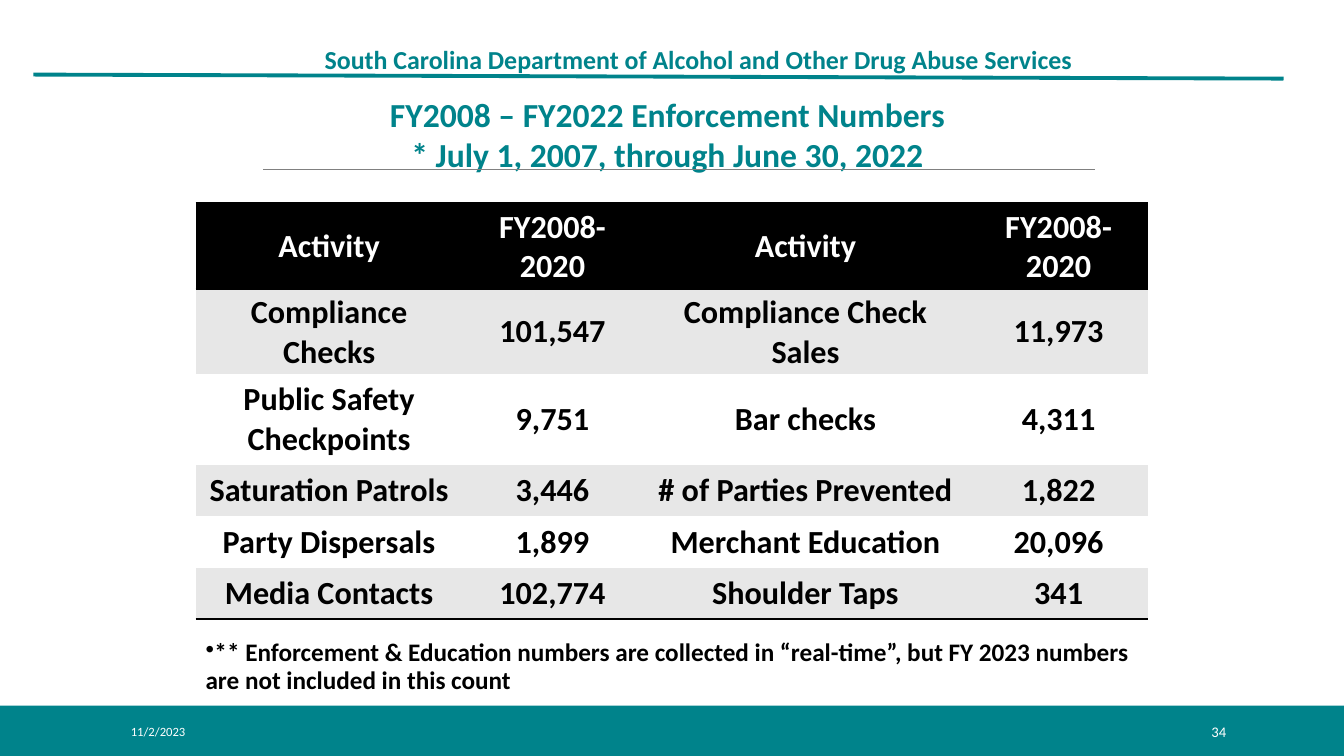
import pptx
import pptx.dml.color
import pptx.enum.shapes
import pptx.enum.text
import pptx.oxml
import pptx.oxml.ns
import pptx.util
from lxml import etree

Inches, Pt = pptx.util.Inches, pptx.util.Pt
RGBColor = pptx.dml.color.RGBColor
ALIGN = pptx.enum.text.PP_ALIGN
MIDDLE = pptx.enum.text.MSO_ANCHOR.MIDDLE

TEAL = RGBColor(0x00, 0x83, 0x8B)
WHITE = RGBColor(0xFF, 0xFF, 0xFF)
BLACK = RGBColor(0x00, 0x00, 0x00)
BAND = RGBColor(0xE7, 0xE7, 0xE7)
GREY = RGBColor(0x80, 0x80, 0x80)
NO_STYLE = "{2D5ABB26-0587-4C30-8999-92F81FD0307C}"

ROWS = [
    ("Activity", "FY2008-2020", "Activity", "FY2008-2020"),
    ("Compliance Checks", "101,547", "Compliance Check Sales", "11,973"),
    ("Public Safety Checkpoints", "9,751", "Bar checks", "4,311"),
    ("Saturation Patrols", "3,446", "# of Parties Prevented", "1,822"),
    ("Party Dispersals", "1,899", "Merchant Education", "20,096"),
    ("Media Contacts", "102,774", "Shoulder Taps", "341"),
]
COL_WIDTHS = (2.65, 1.78, 3.24, 1.78)
ROW_HEIGHTS = (0.84, 0.84, 0.9, 0.51, 0.51, 0.51)


def set_all(obj, values):
    for name, value in values.items():
        setattr(obj, name, value)


class SlideBuilder:
    """Draws styled elements on the current slide."""

    font = "Calibri"

    def __init__(self, slide):
        self.s = slide

    def fill_text(self, tf, text, size, color, bold=True, **para):
        p = tf.paragraphs[0]
        p.text = text
        set_all(p, para)
        for r in p.runs:
            set_all(r.font, {"name": self.font, "size": Pt(size), "bold": bold})
            r.font.color.rgb = color
        return p

    def text(self, box, text, size, color, bold=True, frame=None, **para):
        sp = self.s.shapes.add_textbox(*map(Inches, box))
        tf = sp.text_frame
        set_all(tf, {"word_wrap": True, **(frame or {})})
        return self.fill_text(tf, text, size, color, bold, **para)

    def bullet(self, p, indent):
        pPr = p._p.get_or_add_pPr()
        pPr.set("marL", "0")
        pPr.set("indent", str(Inches(indent)))
        etree.SubElement(pPr, pptx.oxml.ns.qn("a:buChar")).set("char", "•")

    def bar(self, box, color):
        sp = self.s.shapes.add_shape(
            pptx.enum.shapes.MSO_SHAPE.RECTANGLE, *map(Inches, box))
        sp.shadow.inherit = False
        sp.fill.solid()
        sp.fill.fore_color.rgb = color
        sp.line.fill.background()

    def line(self, ends, color, width):
        c = self.s.shapes.add_connector(
            pptx.enum.shapes.MSO_CONNECTOR.STRAIGHT, *map(Inches, ends))
        c.line.color.rgb = color
        c.line.width = Pt(width)
        etree.SubElement(c._element.spPr, pptx.oxml.ns.qn("a:effectLst"))

    def borders(self, cell, sides, color, width):
        tcPr = cell._tc.get_or_add_tcPr()
        for i, side in enumerate(sides):
            tcPr.insert(i, pptx.oxml.parse_xml(
                f'<a:ln{side} {pptx.oxml.ns.nsdecls("a")} w="{Pt(width)}">'
                f'<a:solidFill><a:srgbClr val="{color}"/></a:solidFill></a:ln{side}>'))

    def table(self, left, top, rows, widths, heights, size):
        box = (left, top, sum(widths), sum(heights))
        t = self.s.shapes.add_table(
            len(rows), len(widths), *map(Inches, box)).table
        set_all(t, {"first_row": False, "horz_banding": False})
        t._tbl.tblPr.find(pptx.oxml.ns.qn("a:tableStyleId")).text = NO_STYLE
        for col, width in zip(t.columns, widths):
            col.width = Inches(width)
        for i, values in enumerate(rows):
            t.rows[i].height = Inches(heights[i])
            fill = BLACK if i == 0 else BAND if i % 2 else WHITE
            sides = "TB" if i == 0 else "B" if i == len(rows) - 1 else ""
            for j, value in enumerate(values):
                cell = t.cell(i, j)
                set_all(cell, {
                    "vertical_anchor": MIDDLE,
                    "margin_left": Inches(0.06), "margin_right": Inches(0.06),
                    "margin_top": Inches(0.04), "margin_bottom": Inches(0.04)})
                cell.fill.solid()
                cell.fill.fore_color.rgb = fill
                self.fill_text(cell.text_frame, value, size,
                               BLACK if i else WHITE, alignment=ALIGN.CENTER)
                self.borders(cell, sides, BLACK, 2)


def main():
    prs = pptx.Presentation()
    set_all(prs, {"slide_width": Inches(13.33), "slide_height": Inches(7.5)})
    b = SlideBuilder(prs.slides.add_slide(prs.slide_layouts[6]))
    middle = {"vertical_anchor": MIDDLE}
    header = {
        **middle,
        "margin_left": Inches(0.07), "margin_right": Inches(0.07),
        "margin_top": Inches(0.04), "margin_bottom": Inches(0.04)}

    b.text((3.15, 0.29, 9.62, 0.63),
           "South Carolina Department of Alcohol and Other Drug Abuse Services",
           18.5, TEAL, frame=header, line_spacing=0.9)
    b.line((0.33, 0.74, 12.73, 0.78), TEAL, 2.75)
    b.bar((0, 7, 13.33, 0.5), TEAL)
    b.text((1.2, 7.06, 2.7, 0.4), "11/2/2023", 9, WHITE, False, middle)
    b.text((10.83, 7.06, 1.43, 0.4), "34", 10.5, WHITE, False, middle,
           alignment=ALIGN.RIGHT)
    b.text((2.06, 0.88, 9.12, 0.91),
           "FY2008 – FY2022 Enforcement Numbers\v* July 1, 2007, through June 30, 2022",
           24, TEAL, alignment=ALIGN.CENTER)
    b.line((2.61, 1.68, 10.86, 1.68), GREY, 0.5)
    b.table(1.94, 2.02, ROWS, COL_WIDTHS, ROW_HEIGHTS, 23)
    note = b.text((1.94, 6.3, 9.45, 0.65),
                  "** Enforcement & Education numbers are collected in “real-time”, "
                  "but FY 2023 numbers are not included in this count",
                  18, BLACK, line_spacing=0.9, space_after=Pt(6))
    b.bullet(note, -0.25)

    prs.save("out.pptx")


if __name__ == "__main__":
    main()
